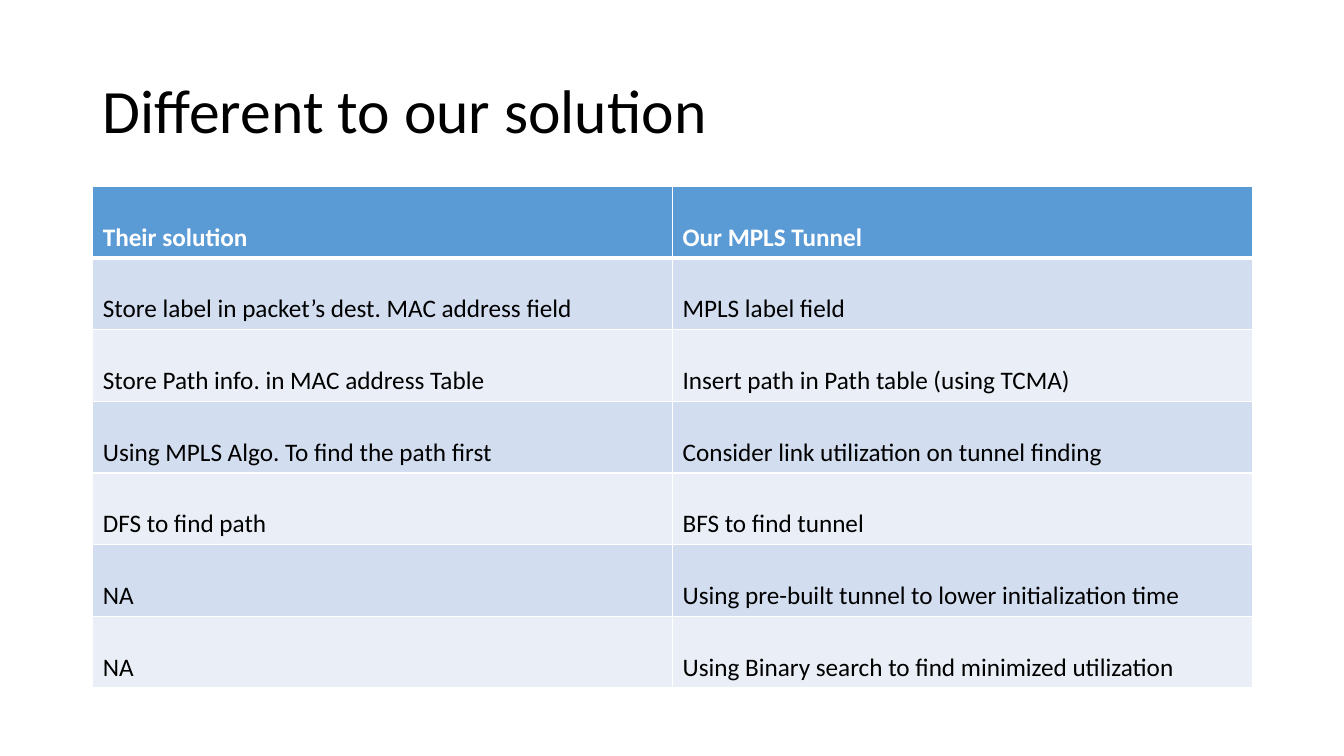
from lxml.etree import SubElement
from pptx import Presentation
from pptx.dml.color import RGBColor
from pptx.enum.text import MSO_ANCHOR as Anchor, PP_ALIGN as Align
from pptx.oxml.ns import qn
from pptx.util import Emu, Pt

PX = 9144  # EMU per px, 100 px to the inch
FONT = "Calibri"
WHITE, BLACK = "FFFFFF", "000000"
HEADER_FILL = "5B9BD5"
BAND_FILLS = ["EAEFF7", "D2DEEF"]
LEFT, WIDTH = 92, 1150
ROW_HEIGHT = 70

ROWS = [
    ("Their solution", "Our MPLS Tunnel"),
    ("Store label in packet’s dest. MAC address field", "MPLS label field"),
    ("Store Path info. in MAC address Table",
     "Insert path in Path table (using TCMA)"),
    ("Using MPLS Algo. To find the path first",
     "Consider link utilization on tunnel finding"),
    ("DFS to find path", "BFS to find tunnel"),
    ("NA", "Using pre-built tunnel to lower initialization time"),
    ("NA", "Using Binary search to find minimized utilization"),
]


def px(n):
    return Emu(n * PX)


def rgb(value):
    return RGBColor.from_string(value)


def write(tf, text, size, color, spacing, bold=False):
    p = tf.paragraphs[0]
    p.alignment = Align.LEFT
    p.line_spacing = spacing
    r = p.add_run()
    r.text = text
    r.font.name = FONT
    r.font.size = Pt(size)
    r.font.bold = bold
    r.font.color.rgb = rgb(color)


def add_title(s, text):
    sp = s.shapes.title
    sp.left, sp.top, sp.width, sp.height = px(LEFT), px(40), px(WIDTH), px(145)
    tf = sp.text_frame
    tf.vertical_anchor = Anchor.MIDDLE
    write(tf, text, 44, BLACK, 0.9)


def set_borders(cell, top, bottom):
    tc_pr = cell._tc.get_or_add_tcPr()
    for side, points in (("L", 1), ("R", 1), ("T", top), ("B", bottom)):
        ln = SubElement(tc_pr, qn(f"a:ln{side}"), w=str(Pt(points)))
        fill = SubElement(ln, qn("a:solidFill"))
        SubElement(fill, qn("a:srgbClr"), val=WHITE)


def add_table(s, rows):
    n_rows, n_cols = len(rows), len(rows[0])
    frame = s.shapes.add_table(n_rows, n_cols, px(LEFT), px(185),
                               px(WIDTH), px(ROW_HEIGHT * n_rows))
    for i, row in enumerate(rows):
        header = i == 0
        for j, text in enumerate(row):
            cell = frame.table.cell(i, j)
            # Thick rule between the header and the first row
            set_borders(cell, top=3 if i == 1 else 1, bottom=3 if header else 1)
            cell.fill.solid()
            cell.fill.fore_color.rgb = rgb(HEADER_FILL if header else BAND_FILLS[i % 2])
            write(cell.text_frame, text, 18, WHITE if header else BLACK, 2.0, header)


def main():
    prs = Presentation()
    prs.slide_width, prs.slide_height = px(1333), px(750)
    s = prs.slides.add_slide(prs.slide_layouts[5])  # Title Only
    add_title(s, "Different to our solution")
    add_table(s, ROWS)
    prs.save("out.pptx")


if __name__ == "__main__":
    main()
